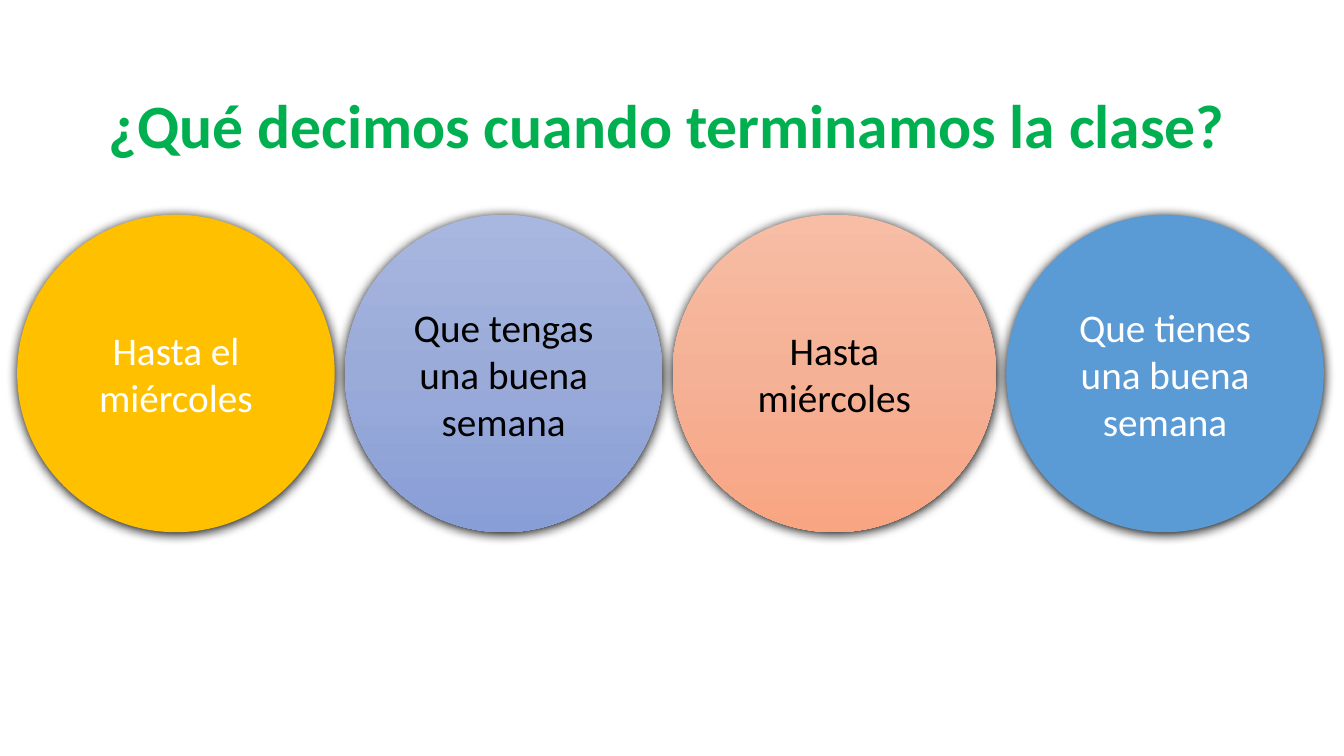
from lxml import etree
from pptx import Presentation
from pptx import util as u
from pptx.dml.color import RGBColor
from pptx.enum import shapes, text
from pptx.oxml.ns import qn

COLORS = {
    "green": "00B050",
    "gold": "FFC000",
    "blue": "5B9BD5",
    "white": "FFFFFF",
    "black": "000000",
    "periwinkle_top": "A8B7DF",
    "periwinkle_middle": "9AABD9",
    "periwinkle_bottom": "889ED7",
    "salmon_top": "F7BDA5",
    "salmon_middle": "F5B196",
    "salmon_bottom": "F8A582",
}


def write_text(frame, content, *, font, size, color, bold=False,
               align=text.PP_ALIGN.LEFT):
    paragraph = frame.paragraphs[0]
    paragraph.alignment = align
    run = paragraph.add_run()
    run.text = content
    run.font.name = font
    run.font.size = u.Pt(size)
    run.font.bold = bold
    run.font.color.rgb = RGBColor.from_string(COLORS[color])


class SlideBuilder:
    font = "Calibri"
    title_size = 44
    phrase_size = 28

    def __init__(self, slide):
        self.slide = slide

    def title(self, content, left, top, width, height):
        box = self.slide.shapes.add_textbox(
            u.Inches(left), u.Inches(top), u.Inches(width), u.Inches(height))
        frame = box.text_frame
        frame.word_wrap = False
        frame.auto_size = text.MSO_AUTO_SIZE.SHAPE_TO_FIT_TEXT
        write_text(frame, content, font=self.font, size=self.title_size,
                   color="green", bold=True)

    def circle(self, content, left, top, width, height, fills, text_color):
        shape = self.slide.shapes.add_shape(
            shapes.MSO_SHAPE.OVAL,
            u.Inches(left), u.Inches(top), u.Inches(width), u.Inches(height))
        self.paint(shape, fills)
        shape.line.fill.background()
        self.add_shadow(shape)
        frame = shape.text_frame
        frame.word_wrap = True
        frame.vertical_anchor = text.MSO_ANCHOR.MIDDLE
        write_text(frame, content, font=self.font, size=self.phrase_size,
                   color=text_color, align=text.PP_ALIGN.CENTER)

    def paint(self, shape, fills):
        """One colour gives a solid fill, several a top-to-bottom gradient."""
        if len(fills) == 1:
            shape.fill.solid()
            shape.fill.fore_color.rgb = RGBColor.from_string(COLORS[fills[0]])
            return
        shape.fill.gradient()
        shape.fill.gradient_angle = 270
        stops = shape.element.spPr.find(".//" + qn("a:gsLst"))
        for stop in list(stops):
            stops.remove(stop)
        for index, name in enumerate(fills):
            position = 100000 * index // (len(fills) - 1)
            stop = etree.SubElement(stops, qn("a:gs"), pos=str(position))
            etree.SubElement(stop, qn("a:srgbClr"), val=COLORS[name])

    def add_shadow(self, shape):
        shape.shadow.inherit = False
        effects = shape.element.spPr.find(qn("a:effectLst"))
        shadow = etree.SubElement(
            effects, qn("a:outerShdw"), blurRad=str(u.Pt(8.5)),
            dist=str(u.Pt(1)), dir="5400000", algn="ctr", rotWithShape="0")
        etree.SubElement(shadow, qn("a:srgbClr"), val=COLORS["black"])


def main():
    presentation = Presentation()
    presentation.slide_width = u.Inches(13.33)
    presentation.slide_height = u.Inches(7.5)
    slide = presentation.slides.add_slide(presentation.slide_layouts[6])
    builder = SlideBuilder(slide)

    # Title
    builder.title("¿Qué decimos cuando terminamos la clase?",
                  0.98, 0.81, 11.38, 0.84)

    # Row of answer circles
    diameter, first_left, top, pitch = 3.15, 0.17, 2.13, 3.25
    periwinkle = ["periwinkle_top", "periwinkle_middle", "periwinkle_bottom"]
    salmon = ["salmon_top", "salmon_middle", "salmon_bottom"]
    answers = [
        ("Hasta el miércoles", diameter, ["gold"], "white"),
        ("Que tengas una buena semana", diameter, periwinkle, "black"),
        ("Hasta miércoles", 3.21, salmon, "black"),
        ("Que tienes una buena semana", diameter, ["blue"], "white"),
    ]
    gap = pitch - diameter
    left = first_left
    for phrase, width, fills, text_color in answers:
        builder.circle(phrase, left, top, width, diameter, fills, text_color)
        left += width + gap

    presentation.save("out.pptx")


if __name__ == "__main__":
    main()
